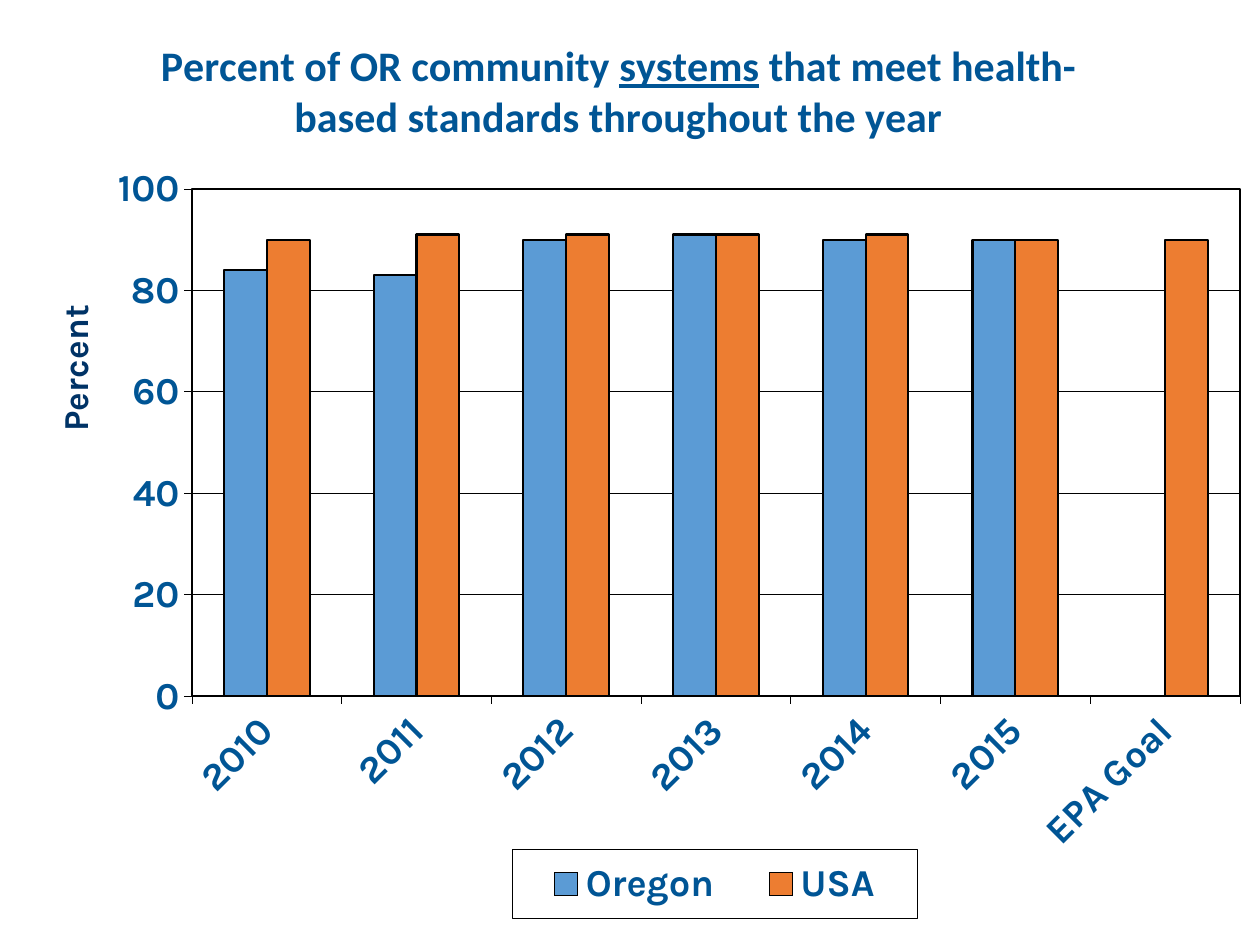
from lxml import etree
from pptx import Presentation
from pptx.chart.data import CategoryChartData
from pptx.dml.color import RGBColor
from pptx.enum.chart import XL_CHART_TYPE, XL_LEGEND_POSITION, XL_TICK_MARK
from pptx.oxml import parse_xml
from pptx.oxml.ns import nsdecls, qn
from pptx.util import Inches, Pt

BLUE_TEXT = RGBColor(0x00, 0x55, 0x95)
NAVY = RGBColor(0x00, 0x33, 0x66)
BLACK = RGBColor(0, 0, 0)

# Content
TITLE_RUNS = [
    ("Percent of OR community ", False),
    ("systems", True),
    (" that meet health-based standards throughout the year", False),
]
AXIS_TITLE = "Percent"
CATEGORIES = ["2010", "2011", "2012", "2013", "2014", "2015", "EPA Goal"]
SERIES = [
    ("Oregon", [84, 83, 90, 91, 90, 90, None], RGBColor(0x5B, 0x9B, 0xD5)),
    ("USA", [90, 91, 91, 91, 91, 90, 90], RGBColor(0xED, 0x7D, 0x31)),
]
VALUE_SCALE = {"minimum_scale": 0, "maximum_scale": 100, "major_unit": 20}

# Formats
CHART_FONT = {"name": "Karla", "size": Pt(21.7), "bold": True}
TITLE_FONT = {"name": "Calibri", "size": Pt(24), "bold": True}
AXIS_TITLE_FONT = {"name": "Karla", "size": Pt(20), "bold": True}


def set_font(font, formats, color=BLUE_TEXT):
    for attribute, value in formats.items():
        setattr(font, attribute, value)
    font.color.rgb = color


def set_line(line, width):
    line.color.rgb = BLACK
    line.width = Pt(width)


def make_layout(inner=False, **fractions):
    """Manual layout in fractions of the chart: x, y and optionally w, h."""
    layout = etree.Element(qn("c:layout"))
    manual = etree.SubElement(layout, qn("c:manualLayout"))
    settings = [("layoutTarget", "inner")] if inner else []
    settings += [("xMode", "edge"), ("yMode", "edge")]
    settings += [(key, str(value)) for key, value in fractions.items()]
    for tag, value in settings:
        etree.SubElement(manual, qn("c:" + tag)).set("val", value)
    return layout


def place(element, layout, after=None):
    for old in element.findall(qn("c:layout")):
        element.remove(old)
    if after is None:
        element.insert(0, layout)
    else:
        element.find(qn(after)).addnext(layout)


def rotate_text(element, degrees):
    body = next(element.iter(qn("a:bodyPr")))
    body.set("rot", str(degrees * 60000))
    body.set("vert", "horz")


presentation = Presentation()
presentation.slide_width, presentation.slide_height = Inches(10), Inches(7.5)
slide = presentation.slides.add_slide(presentation.slide_layouts[6])

# Chart
data = CategoryChartData()
data.categories = CATEGORIES
for name, values, _ in SERIES:
    data.add_series(name, values)
chart = slide.shapes.add_chart(
    XL_CHART_TYPE.COLUMN_CLUSTERED,
    Inches(0.06), Inches(0.14), Inches(9.89), Inches(7.19), data).chart
set_font(chart.font, CHART_FONT)

# Chart title
chart.has_title = True
title_paragraph = chart.chart_title.text_frame.paragraphs[0]
for text, underlined in TITLE_RUNS:
    run = title_paragraph.add_run()
    run.text = text
    set_font(run.font, TITLE_FONT)
    run.font.underline = underlined
place(chart.chart_title._element, make_layout(x=0.12, y=0.02), "c:tx")

# Columns
plot = chart.plots[0]
plot.gap_width = 150
plot.overlap = 0
plot.vary_by_categories = False
for series, (_, _, color) in zip(plot.series, SERIES):
    series.format.fill.solid()
    series.format.fill.fore_color.rgb = color
    series.invert_if_negative = False
    set_line(series.format.line, 1.19)

# Axes
for axis in (chart.category_axis, chart.value_axis):
    axis.major_tick_mark = XL_TICK_MARK.OUTSIDE
    axis.minor_tick_mark = XL_TICK_MARK.NONE
    set_line(axis.format.line, 0.3)
    set_font(axis.tick_labels.font, CHART_FONT)
rotate_text(chart.category_axis._element, -45)

value_axis = chart.value_axis
for attribute, value in VALUE_SCALE.items():
    setattr(value_axis, attribute, value)
value_axis.has_major_gridlines = True
set_line(value_axis.major_gridlines.format.line, 0.3)
axis_title = value_axis.axis_title
axis_title.text_frame.text = AXIS_TITLE
set_font(axis_title.text_frame.paragraphs[0].runs[0].font, AXIS_TITLE_FONT, NAVY)
rotate_text(axis_title._element, -90)
place(axis_title._element, make_layout(x=0.03, y=0.31), "c:tx")

# Framed plot area
plot_area = chart._chartSpace.find(qn("c:chart")).find(qn("c:plotArea"))
place(plot_area, make_layout(inner=True, x=0.148, y=0.189, w=0.841, h=0.56))


def frame(width):
    return parse_xml(
        f'<c:spPr {nsdecls("c", "a")}><a:noFill/><a:ln w="{Pt(width)}">'
        f'<a:solidFill><a:srgbClr val="{BLACK}"/></a:solidFill></a:ln></c:spPr>')


plot_area.append(frame(1.19))

# Framed legend
chart.has_legend = True
legend = chart.legend
legend.position = XL_LEGEND_POSITION.BOTTOM
legend.include_in_layout = False
set_font(legend.font, CHART_FONT)
place(legend._element, make_layout(x=0.405, y=0.918, w=0.325, h=0.076), "c:legendPos")
legend._element.find(qn("c:overlay")).addnext(frame(0.3))

presentation.save("out.pptx")
